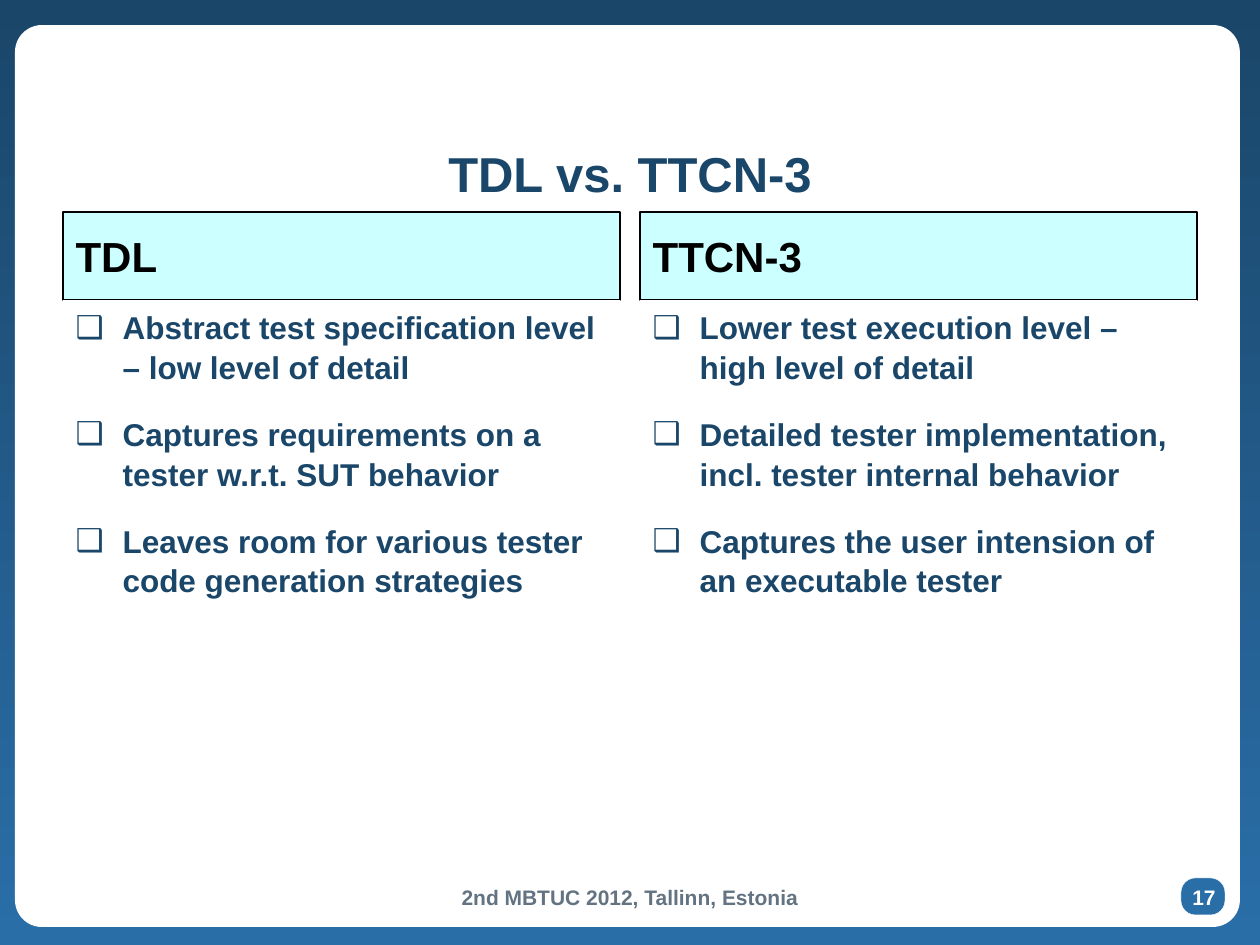
from lxml.etree import SubElement
from pptx import Presentation
from pptx.dml.color import RGBColor
from pptx.enum.shapes import MSO_SHAPE
from pptx.enum.text import MSO_ANCHOR, MSO_AUTO_SIZE, PP_ALIGN
from pptx.oxml.ns import qn
from pptx.util import Inches, Pt

PX = Inches(1) / 126
NAVY, BLUE, WHITE, BLACK = "1A4669", "2A6EA8", "FFFFFF", "000000"
CYAN, GRAY = "CCFFFF", "637381"

COLUMNS = [
    ("TDL", [
        "Abstract test specification level – low level of detail",
        "Captures requirements on a tester w.r.t. SUT behavior",
        "Leaves room for various tester code generation strategies",
    ]),
    ("TTCN-3", [
        "Lower test execution level – high level of detail",
        "Detailed tester implementation, incl. tester internal behavior",
        "Captures the user intension of an executable tester",
    ]),
]


def px(n):
    return round(n * PX)


def rgb(color):
    return RGBColor.from_string(color)


class Deck:
    """Holds the font and the current slide."""

    font = "Arial"

    def __init__(self, prs, layout):
        self.slide = prs.slides.add_slide(prs.slide_layouts[layout])

    def background(self, top, bottom):
        fill = self.slide.background.fill
        fill.gradient()
        fill.gradient_angle = 270
        for stop, color, pos in zip(fill.gradient_stops, (top, bottom), (0, 1)):
            stop.color.rgb = rgb(color)
            stop.position = pos

    def panel(self, box, color, radius, depth, line=None):
        """Adds a rounded panel behind the placeholders, at the given depth."""
        sp = self.slide.shapes.add_shape(MSO_SHAPE.ROUNDED_RECTANGLE, *map(px, box))
        sp.adjustments[0] = radius
        sp.shadow.inherit = False
        self.paint(sp, color, line, 0.25)
        self.slide.shapes._spTree.insert(2 + depth, sp._element)

    def paint(self, sp, color, line=None, width=0.75):
        sp.fill.solid()
        sp.fill.fore_color.rgb = rgb(color)
        if line:
            sp.line.color.rgb = rgb(line)
            sp.line.width = Pt(width)
        else:
            sp.line.fill.background()

    def style(self, p, size, color, align=PP_ALIGN.LEFT):
        p.alignment = align
        for r in p.runs:
            r.font.name = self.font
            r.font.size = Pt(size)
            r.font.bold = True
            r.font.color.rgb = rgb(color)

    def placeholder(self, idx, box, anchor):
        sp = self.slide.placeholders[idx]
        sp.left, sp.top, sp.width, sp.height = map(px, box)
        tf = sp.text_frame
        tf.word_wrap = True
        tf.auto_size = MSO_AUTO_SIZE.NONE
        tf.vertical_anchor = anchor
        return sp

    def title(self, text, box):
        tf = self.placeholder(0, box, MSO_ANCHOR.MIDDLE).text_frame
        tf.text = text
        self.style(tf.paragraphs[0], 28, NAVY, PP_ALIGN.CENTER)

    def heading(self, idx, text, box):
        sp = self.placeholder(idx, box, MSO_ANCHOR.MIDDLE)
        self.paint(sp, CYAN, BLACK)
        p = sp.text_frame.paragraphs[0]
        p.text = text
        p.space_before = Pt(0)
        self.style(p, 24, BLACK)

    def bullets(self, idx, items, box):
        sp = self.placeholder(idx, box, MSO_ANCHOR.TOP)
        self.paint(sp, WHITE)
        tf = sp.text_frame
        tf.text = "\n".join(items)
        for i, p in enumerate(tf.paragraphs):
            pPr = p._p.get_or_add_pPr()
            pPr.set("marL", str(px(47)))
            pPr.set("indent", str(-px(47)))
            SubElement(pPr, qn("a:buChar")).set("char", "❑")
            p.line_spacing = 1.05
            p.space_before = Pt(3.6 if i else 0)
            p.space_after = Pt(12)
            self.style(p, 18, NAVY)

    def label(self, text, box, color):
        tf = self.slide.shapes.add_textbox(*map(px, box)).text_frame
        tf.word_wrap = True
        tf.text = text
        self.style(tf.paragraphs[0], 12, color, PP_ALIGN.CENTER)


def main():
    prs = Presentation()
    prs.slide_width, prs.slide_height = px(1260), px(945)
    deck = Deck(prs, 4)
    deck.background(NAVY, BLUE)
    deck.panel((15, 25, 1225, 902), WHITE, 0.03, 0)
    deck.panel((1181, 878, 44, 37), BLUE, 0.39, 1, WHITE)
    deck.title("TDL vs. TTCN-3", (44, 131, 1172, 84))
    for i, (heading, items) in enumerate(COLUMNS):
        left = 63 + i * 577
        deck.heading(1 + 2 * i, heading, (left, 212, 557, 88))
        deck.bullets(2 + 2 * i, items, (left, 300, 557, 544))
    deck.label("2nd MBTUC 2012, Tallinn, Estonia", (251, 878, 758, 40), GRAY)
    deck.label("17", (1172, 878, 64, 34), WHITE)
    prs.save("out.pptx")


if __name__ == "__main__":
    main()
